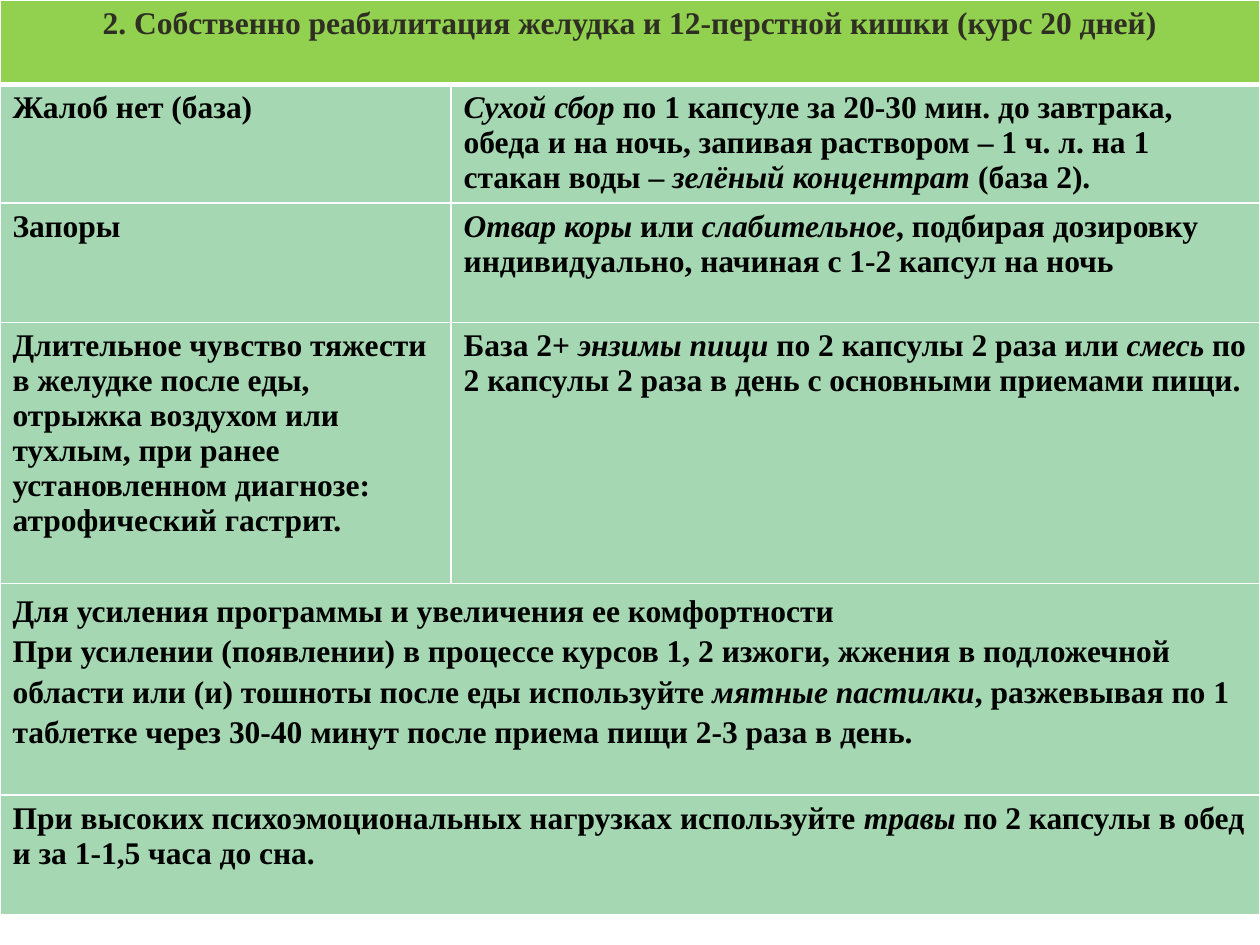
from pptx import Presentation
from pptx.dml.color import RGBColor
from pptx.enum.text import PP_ALIGN as Align
from pptx.oxml.ns import qn
from pptx.util import Inches, Pt
from lxml.etree import SubElement

GREEN, MINT, WHITE = "92D050", "A5D7B2", "FFFFFF"
DARK, BLACK = "2E2E22", "000000"
COLUMNS = [3.58, 6.42]
ROWS = [0.67, 0.94, 0.95, 2.07, 1.68, 0.95]

# Text between asterisks is italic; a row with one entry spans both columns
HEADING = "2. Собственно реабилитация желудка и 12-перстной кишки (курс 20 дней)"
ADVICE = [
    ["Жалоб нет (база)",
     "*Сухой сбор* по 1 капсуле за 20-30 мин. до завтрака, обеда и на ночь, "
     "запивая раствором – 1 ч. л. на 1 стакан воды – *зелёный концентрат* (база 2)."],
    ["Запоры",
     "*Отвар коры* или *слабительное*, подбирая дозировку индивидуально, "
     "начиная с 1-2 капсул на ночь"],
    ["Длительное чувство тяжести в желудке после еды, отрыжка воздухом или тухлым, "
     "при ранее установленном диагнозе: атрофический гастрит.",
     "База 2+ *энзимы пищи* по 2 капсулы 2 раза или *смесь* по 2 капсулы 2 раза "
     "в день с основными приемами пищи."],
    ["Для усиления программы и увеличения ее комфортности\n"
     "При усилении (появлении) в процессе курсов 1, 2 изжоги, жжения в подложечной "
     "области или (и) тошноты после еды используйте *мятные пастилки*, разжевывая "
     "по 1 таблетке через 30-40 минут после приема пищи 2-3 раза в день."],
    ["При высоких психоэмоциональных нагрузках используйте *травы* по 2 капсулы "
     "в обед и за 1-1,5 часа до сна."],
]


def color(value):
    return RGBColor.from_string(value)


class PageBuilder:
    font = {"name": "Times New Roman", "size": Pt(18), "bold": True}

    def __init__(self, page):
        self.page = page

    def table(self, columns, rows):
        frame = self.page.shapes.add_table(
            len(rows), len(columns), 0, 0, Inches(sum(columns)), Inches(sum(rows)))
        table = frame.table
        for column, width in zip(table.columns, columns):
            column.width = Inches(width)
        for row, height in zip(table.rows, rows):
            row.height = Inches(height)
        return table

    def borders(self, cell, bottom):
        properties = cell._tc.get_or_add_tcPr()
        for side, width in {"L": 1, "R": 1, "T": 1, "B": bottom}.items():
            line = SubElement(properties, qn(f"a:ln{side}"), w=str(Pt(width)))
            solid = SubElement(line, qn("a:solidFill"))
            SubElement(solid, qn("a:srgbClr"), val=WHITE)

    def cell(self, cell, fill, bottom=1):
        self.borders(cell, bottom)
        cell.fill.solid()
        cell.fill.fore_color.rgb = color(fill)

    def text(self, cell, text, text_color=BLACK, **layout):
        frame = cell.text_frame
        for index, line in enumerate(text.split("\n")):
            para = frame.add_paragraph() if index else frame.paragraphs[0]
            for name, value in layout.items():
                setattr(para, name, value)
            for part, words in enumerate(line.split("*")):
                if words:
                    self.span(para, words, text_color, italic=part % 2 == 1)

    def span(self, para, words, text_color, italic):
        span = para.add_run()
        span.text = words
        for name, value in {**self.font, "italic": italic}.items():
            setattr(span.font, name, value)
        span.font.color.rgb = color(text_color)


def main():
    deck = Presentation()
    deck.slide_width, deck.slide_height = Inches(10), Inches(7.5)
    builder = PageBuilder(deck.slides.add_slide(deck.slide_layouts[6]))
    table = builder.table(COLUMNS, ROWS)

    # Fills, borders and merged rows
    for row, entries in enumerate([[HEADING]] + ADVICE):
        for column in range(len(COLUMNS)):
            builder.cell(table.cell(row, column), MINT if row else GREEN, 1 if row else 3)
        if len(entries) == 1:
            table.cell(row, 0).merge(table.cell(row, 1))

    # Heading row
    builder.text(table.cell(0, 0), HEADING, DARK, alignment=Align.CENTER)

    # Complaints and advice
    for row, entries in enumerate(ADVICE, start=1):
        for column, entry in enumerate(entries):
            spacing = {"line_spacing": 1.15} if "\n" in entry else {}
            builder.text(table.cell(row, column), entry, **spacing)

    deck.save("out.pptx")


if __name__ == "__main__":
    main()
